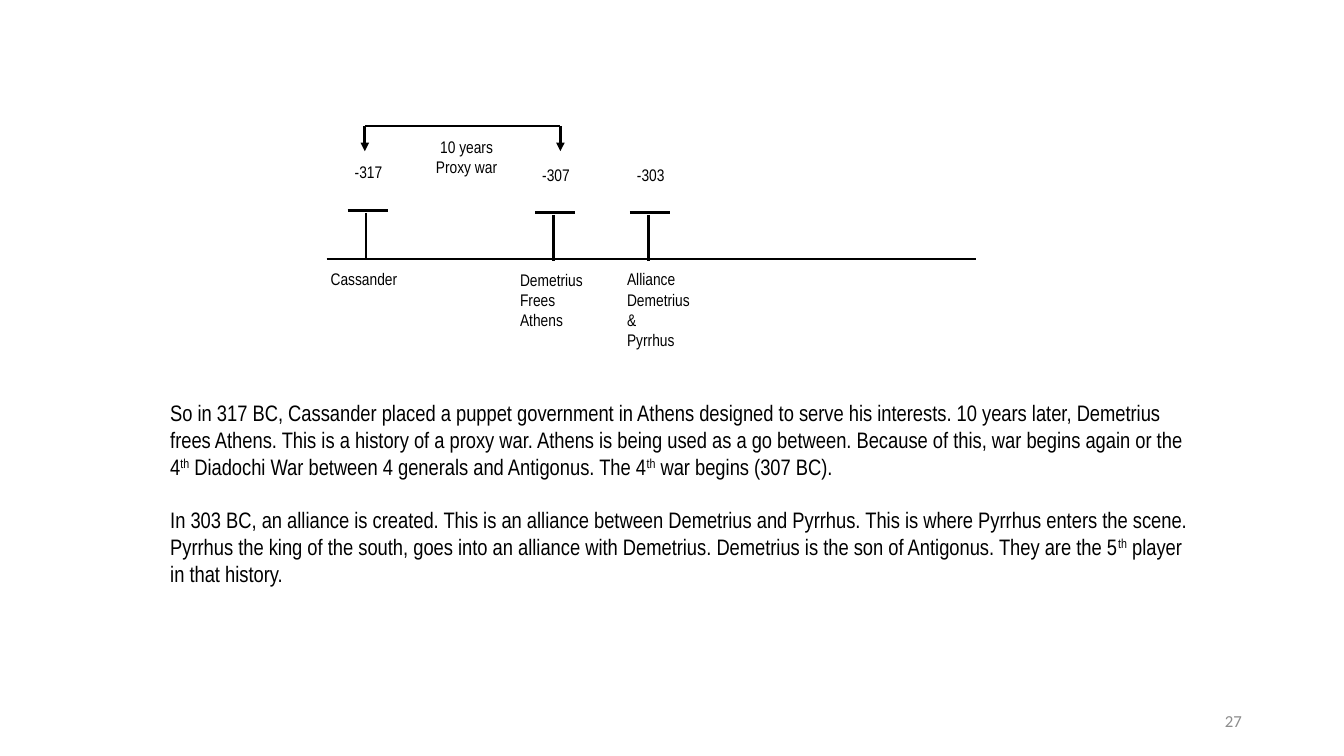
from pptx import Presentation
from pptx.dml.color import RGBColor
from pptx.enum.shapes import MSO_CONNECTOR
from pptx.enum.text import MSO_ANCHOR, PP_ALIGN
from pptx.oxml.ns import qn
from pptx.util import Pt
from lxml.etree import SubElement

deck = Presentation()
deck.slide_width, deck.slide_height = Pt(960), Pt(540)
slide = deck.slides.add_slide(deck.slide_layouts[6])


def write(text, left, top, width, height, size=12, font="Arial Narrow", color="000000",
          align=PP_ALIGN.LEFT, anchor=MSO_ANCHOR.TOP, side=2.9, edge=2.9, gap=0):
    box = slide.shapes.add_textbox(Pt(left), Pt(top), Pt(width), Pt(height))
    frame = box.text_frame
    frame.word_wrap = True
    frame.vertical_anchor = anchor
    frame.margin_left = frame.margin_right = Pt(side)
    frame.margin_top = frame.margin_bottom = Pt(edge)
    for row, line in enumerate(text.split("\n")):
        para = frame.paragraphs[0] if row == 0 else frame.add_paragraph()
        para.alignment = align
        para.space_after = Pt(gap)
        for part, piece in enumerate(line.split("^")):
            run = para.add_run()
            run.text = piece
            run.font.size = Pt(size)
            run.font.name = font
            run.font.color.rgb = RGBColor.from_string(color)
            if part % 2:
                run.font._element.set("baseline", "30000")


def draw(left, top, right, bottom, arrow=False, color="000000"):
    line = slide.shapes.add_connector(
        MSO_CONNECTOR.STRAIGHT, Pt(left), Pt(top), Pt(right), Pt(bottom))
    line.line.width = Pt(2)
    line.line.color.rgb = RGBColor.from_string(color)
    if arrow:
        SubElement(line.line._get_or_add_ln(), qn("a:tailEnd"), type="triangle")
    SubElement(line._element.spPr, qn("a:effectLst"))


draw(233.3, 185, 697, 185)

events = [
    ("-317", "Cassander", 261.4, 150.5, 233.3, 50),
    ("-307", "Demetrius\nFrees\nAthens", 395.3, 152, 368.6, 54),
    ("-303", "Alliance\nDemetrius &\nPyrrhus", 463, 152, 445, 69),
]
for year, note, stem, bar, left, height in events:
    draw(stem, bar + 1.5, stem, bar + 34.5)
    draw(stem - 13, bar, stem + 15.5, bar)
    write(year, stem - 23, bar - 37.5, 49.7, 40.3, align=PP_ALIGN.CENTER)
    write(note, left, 189.4, 58.3, height)

start, end = 260.6, 400.3
draw(start, 90, end, 90)
for x in (start, end):
    draw(x, 90, x, 108, arrow=True)
write("10 years\nProxy war", 296.6, 95, 73.4, 44.6, align=PP_ALIGN.CENTER)

story = (
    "So in 317 BC, Cassander placed a puppet government in Athens designed to serve his "
    "interests. 10 years later, Demetrius frees Athens. This is a history of a proxy war. "
    "Athens is being used as a go between. Because of this, war begins again or the "
    "4^th^ Diadochi War between 4 generals and Antigonus. The 4^th^ war begins (307 BC).\n"
    "In 303 BC, an alliance is created. This is an alliance between Demetrius and Pyrrhus. "
    "This is where Pyrrhus enters the scene. Pyrrhus the king of the south, goes into an "
    "alliance with Demetrius. Demetrius is the son of Antigonus. They are the "
    "5^th^ player in that history."
)
write(story, 114.5, 281.5, 749.5, 165, size=16, side=7.2, edge=3.6, gap=19)

write("27", 678.2, 500.4, 216, 28.8, font="Calibri", color="8C8C8C",
      align=PP_ALIGN.RIGHT, anchor=MSO_ANCHOR.MIDDLE, side=7.2, edge=3.6)

deck.save("out.pptx")
